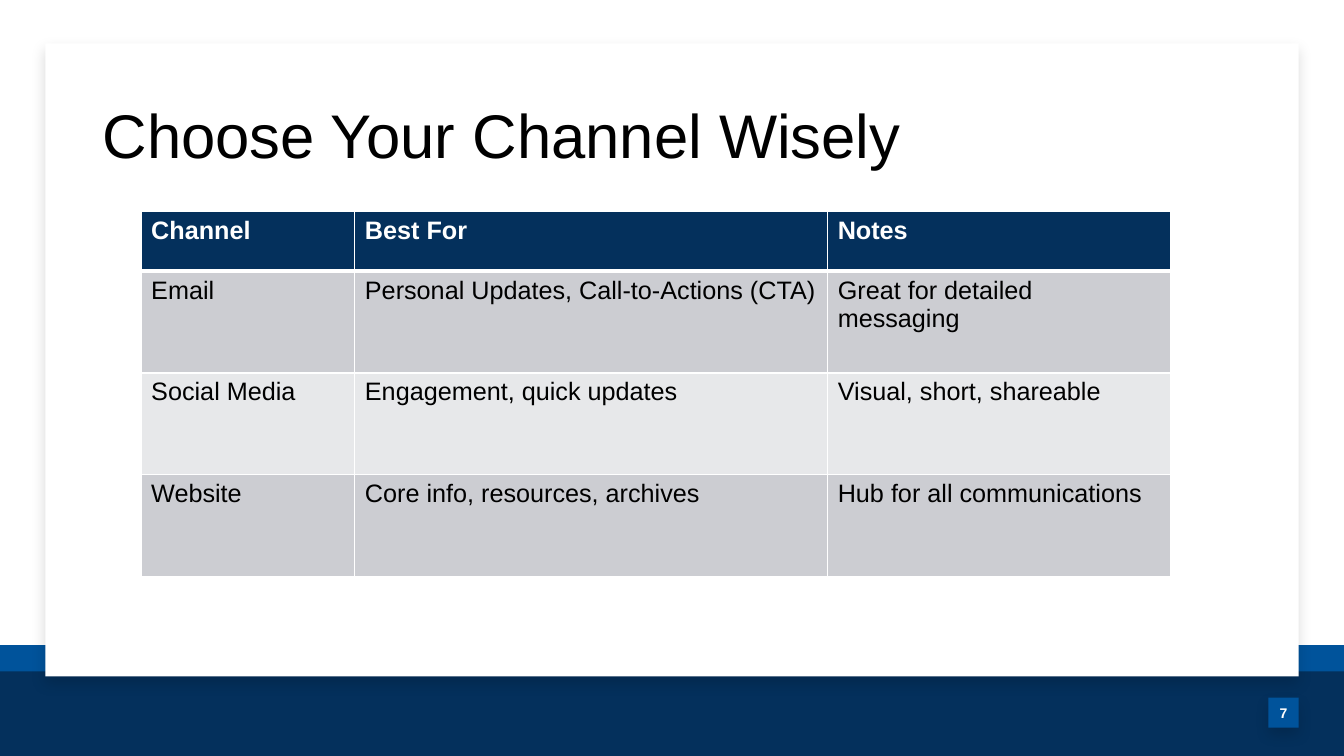
from lxml.etree import SubElement
from pptx import Presentation
from pptx.dml.color import RGBColor
from pptx.enum.shapes import MSO_SHAPE
from pptx.enum.text import MSO_ANCHOR, PP_ALIGN
from pptx.oxml.ns import qn
from pptx.util import Inches, Pt

WHITE = RGBColor(0xFF, 0xFF, 0xFF)
BLACK = RGBColor(0, 0, 0)
NAVY = RGBColor(0x04, 0x30, 0x5C)
BLUE = RGBColor(0x00, 0x53, 0x9B)
ROW_FILLS = (RGBColor(0xCC, 0xCD, 0xD2), RGBColor(0xE7, 0xE8, 0xEA))

SLIDE_WIDTH, SLIDE_HEIGHT = 13.33, 7.5
MARGIN = 0.45
BADGE_SIZE = 0.3

COLUMN_WIDTHS = (2.12, 4.69, 3.4)
HEADER_HEIGHT, ROW_HEIGHT = 0.59, 1.01
CHANNELS = (
    ("Channel", "Best For", "Notes"),
    ("Email", "Personal Updates, Call-to-Actions (CTA)", "Great for detailed messaging"),
    ("Social Media", "Engagement, quick updates", "Visual, short, shareable"),
    ("Website", "Core info, resources, archives", "Hub for all communications"),
)


def write_text(frame, text, size=18, color=BLACK, bold=False,
               align=PP_ALIGN.LEFT, line_spacing=None):
    para = frame.paragraphs[0]
    para.alignment = align
    para.line_spacing = line_spacing
    span = para.add_run()
    span.text = text
    span.font.name = "Arial"
    span.font.size = Pt(size)
    span.font.bold = bold
    span.font.color.rgb = color


def add_panel(page, box, color, raised=False):
    """Add a plain rectangle; a raised one casts a soft shadow downwards."""
    panel = page.shapes.add_shape(MSO_SHAPE.RECTANGLE, *map(Inches, box))
    panel.fill.solid()
    panel.fill.fore_color.rgb = color
    panel.line.fill.background()
    panel.shadow.inherit = False
    if raised:
        effects = panel._element.spPr.find(qn("a:effectLst"))
        shadow = SubElement(effects, qn("a:outerShdw"), blurRad=str(Pt(10)),
                            dist=str(Pt(5)), dir="5400000", algn="t", rotWithShape="0")
        tint = SubElement(shadow, qn("a:srgbClr"), val=str(BLACK))
        SubElement(tint, qn("a:alpha"), val="15000")
    return panel


def add_backdrop(page, box):
    left, top, width, height = box
    bottom = top + height
    add_panel(page, (left, bottom - 1.1, width, 0.5), BLUE)
    add_panel(page, (left, bottom - 0.84, width, 0.84), NAVY)
    add_panel(page, (left + MARGIN, top + 0.43, width - 2 * MARGIN, 6.28), WHITE, raised=True)


def add_page_number(page, box, number):
    frame = add_panel(page, box, BLUE, raised=True).text_frame
    frame.margin_left = frame.margin_right = frame.margin_top = frame.margin_bottom = 0
    frame.vertical_anchor = MSO_ANCHOR.MIDDLE
    write_text(frame, number, size=10, color=WHITE, bold=True, align=PP_ALIGN.CENTER)


def add_title(page, box, text):
    frame = page.shapes.add_textbox(*map(Inches, box)).text_frame
    frame.word_wrap = True
    frame.vertical_anchor = MSO_ANCHOR.MIDDLE
    write_text(frame, text, size=44, line_spacing=0.9)


def add_borders(cell, **widths):
    """Draw white cell borders, with widths in points keyed by side."""
    properties = cell._tc.get_or_add_tcPr()
    for side in "LRTB":
        line = SubElement(properties, qn(f"a:ln{side}"), w=str(Pt(widths.get(side, 1))))
        fill = SubElement(line, qn("a:solidFill"))
        SubElement(fill, qn("a:srgbClr"), val=str(WHITE))


def add_channel_table(page, box):
    table = page.shapes.add_table(len(CHANNELS), len(COLUMN_WIDTHS), *map(Inches, box)).table
    for column, width in zip(table.columns, COLUMN_WIDTHS):
        column.width = Inches(width)
    for row_index, texts in enumerate(CHANNELS):
        header = row_index == 0
        table.rows[row_index].height = Inches(HEADER_HEIGHT if header else ROW_HEIGHT)
        for column_index, text in enumerate(texts):
            cell = table.cell(row_index, column_index)
            add_borders(cell, T=3 if row_index == 1 else 1, B=3 if header else 1)
            cell.fill.solid()
            cell.fill.fore_color.rgb = NAVY if header else ROW_FILLS[(row_index - 1) % 2]
            write_text(cell.text_frame, text, color=WHITE if header else BLACK, bold=header)


def main():
    deck = Presentation()
    deck.slide_width, deck.slide_height = Inches(SLIDE_WIDTH), Inches(SLIDE_HEIGHT)
    page = deck.slides.add_slide(deck.slide_layouts[6])
    add_backdrop(page, (0, 0, SLIDE_WIDTH, SLIDE_HEIGHT))
    add_page_number(page, (SLIDE_WIDTH - MARGIN - BADGE_SIZE, 6.92, BADGE_SIZE, BADGE_SIZE), "7")
    add_title(page, (0.92, 0.65, 11.5, 1.45), "Choose Your Channel Wisely")
    table_height = HEADER_HEIGHT + ROW_HEIGHT * (len(CHANNELS) - 1)
    add_channel_table(page, (1.4, 2.1, sum(COLUMN_WIDTHS), table_height))
    deck.save("out.pptx")


if __name__ == "__main__":
    main()
